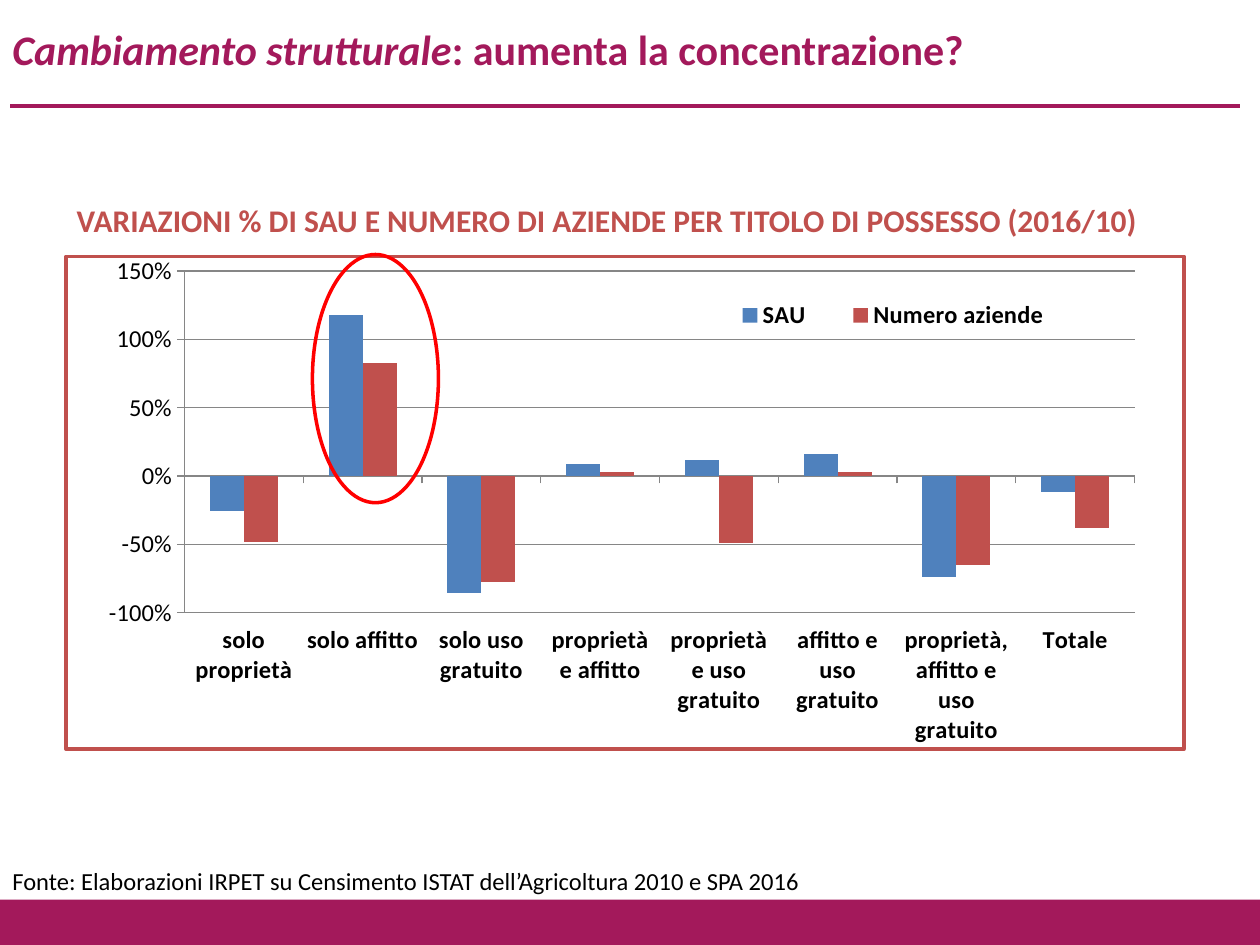
from lxml import etree
from pptx import Presentation
from pptx.chart.data import CategoryChartData
from pptx.dml.color import RGBColor
from pptx.enum.chart import XL_CHART_TYPE, XL_LEGEND_POSITION, XL_TICK_LABEL_POSITION, XL_TICK_MARK
from pptx.enum.shapes import MSO_CONNECTOR, MSO_SHAPE
from pptx.enum.text import MSO_ANCHOR
from pptx.oxml import parse_xml
from pptx.oxml.ns import nsdecls, qn
from pptx.util import Inches, Pt

PLUM, BRICK, BLUE, RED, BLACK, GRAY = "A3195B", "C0504D", "4F81BD", "FF0000", "000000", "868686"
color = RGBColor.from_string

prs = Presentation()
prs.slide_width, prs.slide_height = Inches(10), Inches(7.5)
slide = prs.slides.add_slide(prs.slide_layouts[6])
shapes = slide.shapes


def add_text(text, left, top, width, height, size=14, fill=BLACK, bold=False,
             anchor=MSO_ANCHOR.TOP, italic_lead=""):
    box = shapes.add_textbox(Inches(left), Inches(top), Inches(width), Inches(height))
    frame = box.text_frame
    frame.word_wrap = True
    frame.vertical_anchor = anchor
    for part, italic in ((italic_lead, True), (text, False)):
        if part:
            run = frame.paragraphs[0].add_run()
            run.text = part
            run.font.name = "Calibri"
            run.font.size = Pt(size)
            run.font.bold = bold
            run.font.italic = italic
            run.font.color.rgb = color(fill)


def set_layout(parent, index, inner=False, **box):
    for old in parent.findall(qn("c:layout")):
        parent.remove(old)
    layout = etree.Element(qn("c:layout"))
    manual = etree.SubElement(layout, qn("c:manualLayout"))
    settings = {"layoutTarget": "inner"} if inner else {}
    settings.update(xMode="edge", yMode="edge", **box)
    for tag, value in settings.items():
        etree.SubElement(manual, qn(f"c:{tag}")).set("val", str(value))
    parent.insert(index, layout)


title_rule = shapes.add_connector(
    MSO_CONNECTOR.STRAIGHT, Inches(0.08), Inches(0.84), Inches(9.84), Inches(0.84))
title_rule.line.color.rgb = color(PLUM)
title_rule.line.width = Pt(2.5)
etree.SubElement(title_rule._element.spPr, qn("a:effectLst"))

footer_band = shapes.add_shape(
    MSO_SHAPE.RECTANGLE, Inches(0), Inches(7.14), Inches(10), Inches(0.39))
footer_band.shadow.inherit = False
footer_band.fill.solid()
footer_band.fill.fore_color.rgb = color(PLUM)
footer_band.line.fill.background()

tenure = CategoryChartData(number_format="0%")
tenure.categories = [
    "solo proprietà", "solo affitto", "solo uso gratuito", "proprietà e affitto",
    "proprietà e uso gratuito", "affitto e uso gratuito",
    "proprietà, affitto e uso gratuito", "Totale"]
tenure.add_series("SAU", [-0.26, 1.18, -0.86, 0.09, 0.12, 0.16, -0.74, -0.12])
tenure.add_series("Numero aziende", [-0.48, 0.83, -0.78, 0.03, -0.49, 0.03, -0.65, -0.38])
chart = shapes.add_chart(
    XL_CHART_TYPE.COLUMN_CLUSTERED, Inches(0.51), Inches(2.02),
    Inches(8.9), Inches(3.94), tenure).chart
chart.has_title = False
chart.font.name = "Calibri"
chart.font.size = Pt(14)
chart.font.color.rgb = color(BLACK)

plot = chart.plots[0]
plot.gap_width = 150
plot.overlap = 0
plot.vary_by_categories = False
for series, fill in zip(plot.series, (BLUE, BRICK)):
    series.format.fill.solid()
    series.format.fill.fore_color.rgb = color(fill)
    series.invert_if_negative = False

tenure_axis, change_axis = chart.category_axis, chart.value_axis
tenure_axis.tick_label_position = XL_TICK_LABEL_POSITION.LOW
tenure_axis.tick_labels.font.bold = True
change_axis.minimum_scale = -1
change_axis.maximum_scale = 1.5
change_axis.major_unit = 0.5
change_axis.tick_labels.number_format = "0%"
change_axis.tick_labels.number_format_is_linked = False
change_axis.has_major_gridlines = True
for axis in (tenure_axis, change_axis):
    axis.major_tick_mark = XL_TICK_MARK.OUTSIDE
for lined in (tenure_axis, change_axis, change_axis.major_gridlines):
    lined.format.line.color.rgb = color(GRAY)
    lined.format.line.width = Pt(0.75)

chart.has_legend = True
legend = chart.legend
legend.position = XL_LEGEND_POSITION.RIGHT
legend.include_in_layout = True
legend.font.bold = True
legend.font.size = Pt(14)

chart_body = chart.element.find(qn("c:chart"))
set_layout(chart_body.find(qn("c:plotArea")), 0, inner=True, x=0.106, y=0.03, w=0.85, h=0.693)
set_layout(chart_body.find(qn("c:legend")), 1, x=0.57, y=0.08, w=0.34, h=0.08)
chart_body.addnext(parse_xml(
    f'<c:spPr {nsdecls("c", "a")}><a:solidFill><a:srgbClr val="FFFFFF"/></a:solidFill>'
    f'<a:ln w="{Pt(2)}"><a:solidFill><a:srgbClr val="{BRICK}"/></a:solidFill></a:ln></c:spPr>'))

add_text(": aumenta la concentrazione?", 0, 0, 9, 0.77, size=24, fill=PLUM, bold=True,
         anchor=MSO_ANCHOR.MIDDLE, italic_lead="Cambiamento strutturale")

rent_highlight = shapes.add_shape(
    MSO_SHAPE.OVAL, Inches(2.48), Inches(2.02), Inches(1), Inches(1.97))
rent_highlight.shadow.inherit = False
rent_highlight.fill.background()
rent_highlight.line.color.rgb = color(RED)
rent_highlight.line.width = Pt(2)

add_text("VARIAZIONI % DI SAU E NUMERO DI AZIENDE PER TITOLO DI POSSESSO (2016/10)",
         0.51, 1.55, 8.66, 0.4, size=18, fill=BRICK, bold=True)
add_text("Fonte: Elaborazioni IRPET su Censimento ISTAT dell’Agricoltura 2010 e SPA 2016",
         0, 6.82, 8.9, 0.34, anchor=MSO_ANCHOR.MIDDLE)

prs.save("out.pptx")
